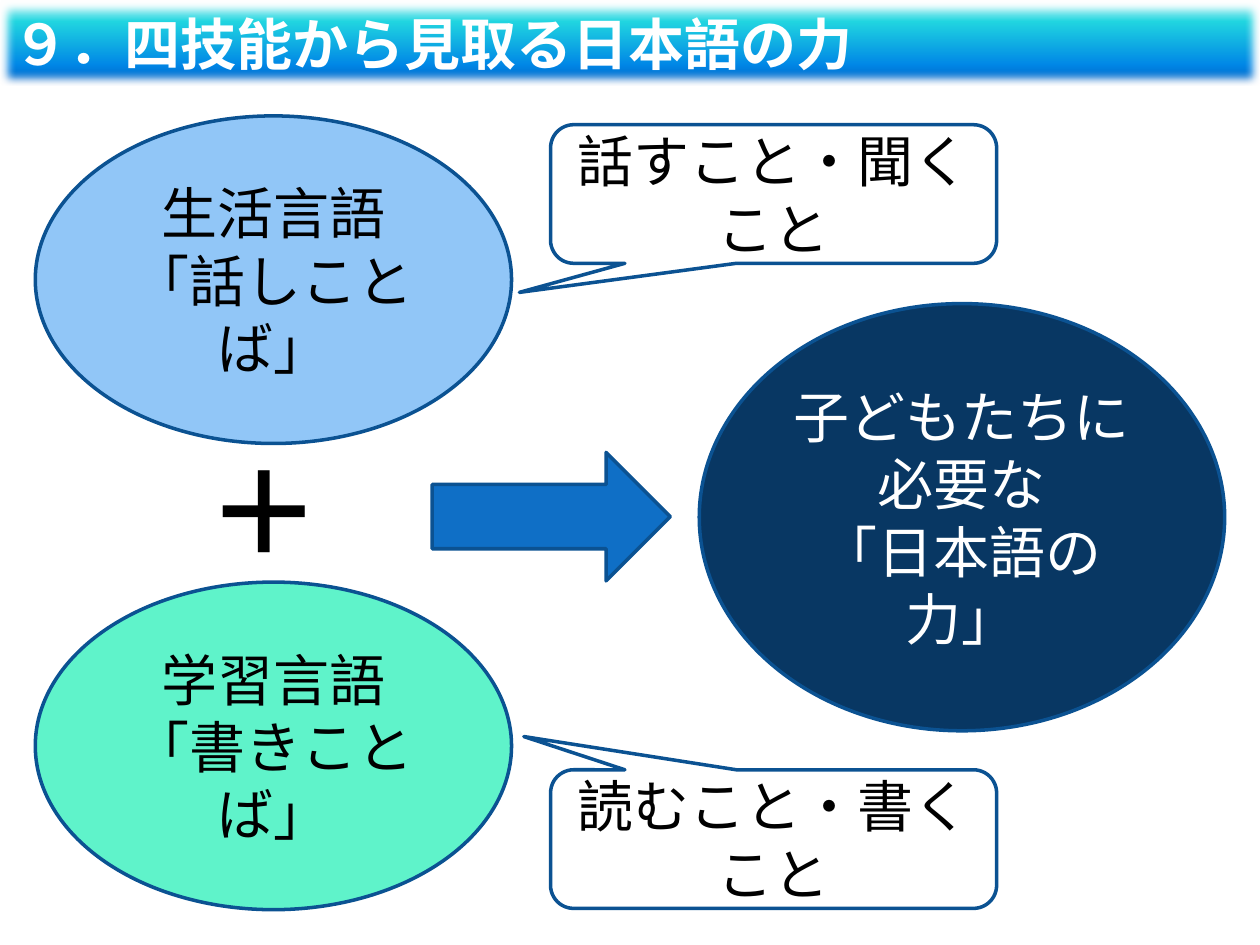
from lxml.etree import SubElement
from pptx import Presentation
from pptx.dml.color import RGBColor
from pptx.enum.shapes import MSO_SHAPE as Shape
from pptx.enum.text import MSO_ANCHOR as Anchor, MSO_AUTO_SIZE as AutoSize, PP_ALIGN as Align
from pptx.oxml.ns import qn
from pptx.util import Pt

TITLE = "９．四技能から見取る日本語の力"
BANNER_STOPS = [(0, "FFFFFF"), (25, "21D6E0"), (75, "0087E6"), (100, "005CBF")]
JAPANESE = "Noto Sans CJK JP"
OUTLINE = "0B5292"

SKILL_LEFT, SKILL_WIDTH, SKILL_HEIGHT = 20.16, 272.16, 187.2
CALLOUT_LEFT, CALLOUT_WIDTH, CALLOUT_HEIGHT = 314.64, 254.88, 79.2
SKILLS = [
    dict(lines=["生活言語", "「話しことば」"], fill="91C6F7", top=66.24,
         callout="話すこと・聞くこと", callout_top=71.28, pointer=(-0.57, 0.71)),
    dict(lines=["学習言語", "「書きことば」"], fill="5FF3CA", top=332.64,
         callout="読むこと・書くこと", callout_top=439.92, pointer=(-0.56, -0.74)),
]
GOAL = ["子どもたちに", "必要な", "「日本語の力」"]


def color(value):
    return RGBColor.from_string(value)


def write(shape, lines, size=32, ink="000000", font=JAPANESE, bold=False,
          align=Align.CENTER, anchor=Anchor.MIDDLE, fit=AutoSize.NONE):
    frame = shape.text_frame
    frame.word_wrap = True
    frame.auto_size = fit
    frame.vertical_anchor = anchor
    for index, line in enumerate(lines):
        para = frame.add_paragraph() if index else frame.paragraphs[0]
        para.alignment = align
        span = para.add_run()
        span.text = line
        span.font.size = Pt(size)
        span.font.bold = bold
        span.font.name = font
        span.font.color.rgb = color(ink)
        SubElement(span.font._element, qn("a:ea"), typeface=JAPANESE)


def add_figure(page, kind, left, top, width, height, fill):
    figure = page.shapes.add_shape(kind, Pt(left), Pt(top), Pt(width), Pt(height))
    figure.shadow.inherit = False
    figure.fill.solid()
    figure.fill.fore_color.rgb = color(fill)
    figure.line.color.rgb = color(OUTLINE)
    figure.line.width = Pt(2)
    return figure


def add_banner(page):
    banner = page.shapes.title
    banner.left, banner.top, banner.width, banner.height = Pt(0), Pt(0), Pt(720), Pt(48.96)
    banner.fill.gradient()
    banner.fill.gradient_angle = 270
    properties = banner._element.spPr
    stops = properties.find(".//" + qn("a:gsLst"))
    for stop in list(stops):
        stops.remove(stop)
    for percent, value in BANNER_STOPS:
        stop = SubElement(stops, qn("a:gs"), pos=str(percent * 1000))
        SubElement(stop, qn("a:srgbClr"), val=value)
    effects = SubElement(properties, qn("a:effectLst"))
    SubElement(effects, qn("a:softEdge"), rad=str(Pt(5)))
    write(banner, [TITLE], ink="FFFFFF", bold=True, align=Align.LEFT)


def main():
    deck = Presentation()
    deck.slide_width, deck.slide_height = Pt(720), Pt(540)
    page = deck.slides.add_slide(deck.slide_layouts[5])

    for skill in SKILLS:
        oval = add_figure(page, Shape.OVAL, SKILL_LEFT, skill["top"],
                          SKILL_WIDTH, SKILL_HEIGHT, skill["fill"])
        write(oval, skill["lines"])

    plus = page.shapes.add_textbox(Pt(110.88), Pt(247.68), Pt(73.44), Pt(87.12))
    write(plus, ["＋"], size=66, font="Arial", bold=True, align=Align.LEFT,
          anchor=Anchor.TOP, fit=AutoSize.SHAPE_TO_FIT_TEXT)

    add_figure(page, Shape.RIGHT_ARROW, 246.96, 258.48, 136.08, 73.44, "0F6FC6")
    goal = add_figure(page, Shape.OVAL, 399.6, 173.52, 300.24, 244.08, "083763")
    write(goal, GOAL, ink="FFFFFF")

    for skill in SKILLS:
        callout = add_figure(page, Shape.ROUNDED_RECTANGULAR_CALLOUT, CALLOUT_LEFT,
                             skill["callout_top"], CALLOUT_WIDTH, CALLOUT_HEIGHT, "FFFFFF")
        callout.adjustments[0], callout.adjustments[1] = skill["pointer"]
        write(callout, [skill["callout"]])

    add_banner(page)
    deck.save("out.pptx")


if __name__ == "__main__":
    main()
